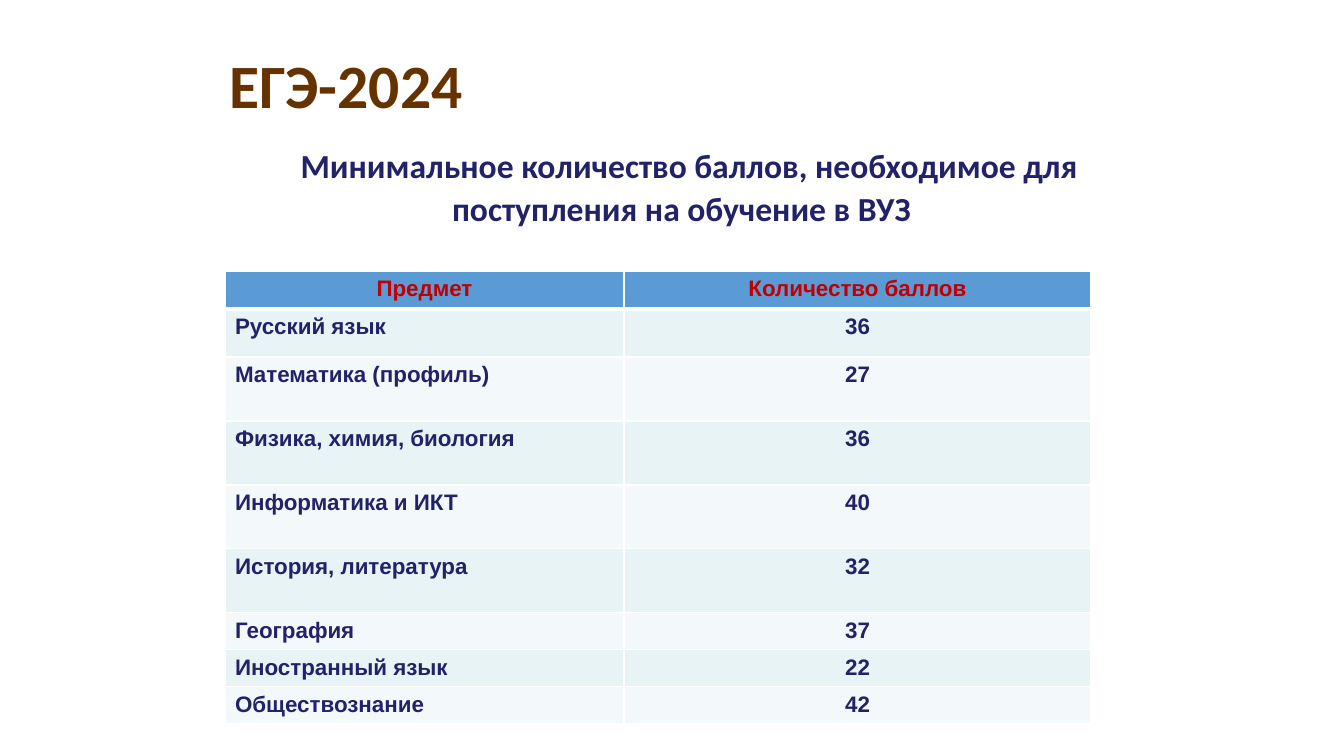
from dataclasses import dataclass

from lxml import etree
from pptx import Presentation
from pptx.dml.color import RGBColor
from pptx.enum.text import MSO_ANCHOR, MSO_AUTO_SIZE, PP_ALIGN
from pptx.oxml.ns import qn
from pptx.util import Pt

LEFT, CENTER = PP_ALIGN.LEFT, PP_ALIGN.CENTER
MIDDLE, TOP = MSO_ANCHOR.MIDDLE, MSO_ANCHOR.TOP
NO_FIT = MSO_AUTO_SIZE.NONE
TITLE_ONLY = 5
SCALE = 914400 / 100.8


@dataclass(frozen=True)
class Theme:
    head_font: str = "Calibri"
    cell_font: str = "Arial"
    brown: str = "663300"
    navy: str = "222268"
    red: str = "C00000"
    blue: str = "5B9BD5"
    bands: tuple = ("E7F3F4", "F3F9FA")
    rule: str = "FFFFFF"
    title: int = 44
    lead: int = 48
    sub: int = 24
    cell: int = 16


THEME = Theme()

HEADS = ("Предмет", "Количество баллов")
SCORES = (
    ("Русский язык", 36),
    ("Математика (профиль)", 27),
    ("Физика, химия, биология", 36),
    ("Информатика и ИКТ", 40),
    ("История, литература", 32),
    ("География", 37),
    ("Иностранный язык", 22),
    ("Обществознание", 42),
)
COLS = (399, 467)
ROWS = (38, 48) + (64,) * 4 + (37,) * 3


def px(n):
    return round(n * SCALE)


def place(shape, x, y, w, h):
    shape.left, shape.top, shape.width, shape.height = map(px, (x, y, w, h))


def add_run(para, text, font, size, color):
    run = para.add_run()
    run.text = text
    run.font.name = font
    run.font.size = Pt(size)
    run.font.bold = True
    run.font.color.rgb = RGBColor.from_string(color)


def set_frame(frame, anchor, align):
    """Prepare a heading's text frame and return its first paragraph."""
    frame.word_wrap = True
    frame.auto_size = NO_FIT
    frame.vertical_anchor = anchor
    para = frame.paragraphs[0]
    para.alignment = align
    para.line_spacing = 0.9
    return para


def add_title(slide):
    title = slide.shapes.title
    place(title, 219, 21, 907, 135)
    para = set_frame(title.text_frame, MIDDLE, LEFT)
    add_run(para, "ЕГЭ-2024", THEME.head_font, THEME.title, THEME.brown)


def add_lead(slide):
    box = slide.shapes.add_textbox(0, 0, 0, 0)
    place(box, 228, 115, 907, 139)
    para = set_frame(box.text_frame, TOP, CENTER)
    para.space_before = Pt(10)
    text = "Минимальное количество баллов, необходимое для поступления на обучение в ВУЗ"
    for part, size in ((" ", THEME.lead), (text, THEME.sub)):
        add_run(para, part, THEME.head_font, size, THEME.navy)


def set_edges(cell, top, bottom):
    """Draw the cell's borders; top and bottom are widths in points."""
    props = cell._tc.get_or_add_tcPr()
    for tag, width in (("lnL", 1), ("lnR", 1), ("lnT", top), ("lnB", bottom)):
        line = etree.SubElement(props, qn(f"a:{tag}"), w=str(Pt(width)))
        fill = etree.SubElement(line, qn("a:solidFill"))
        etree.SubElement(fill, qn("a:srgbClr"), val=THEME.rule)


def fill_cell(cell, text, row, col):
    head = row == 0
    set_edges(cell, 3 if row == 1 else 1, 3 if head else 1)
    cell.fill.solid()
    back = THEME.blue if head else THEME.bands[(row - 1) % 2]
    cell.fill.fore_color.rgb = RGBColor.from_string(back)
    para = cell.text_frame.paragraphs[0]
    para.alignment = CENTER if head or col else LEFT
    color = THEME.red if head else THEME.navy
    add_run(para, str(text), THEME.cell_font, THEME.cell, color)


def add_scores(slide):
    size = px(sum(COLS)), px(sum(ROWS))
    frame = slide.shapes.add_table(len(ROWS), len(COLS), px(225), px(271), *size)
    table = frame.table
    for col, width in zip(table.columns, COLS):
        col.width = px(width)
    for row, height in zip(table.rows, ROWS):
        row.height = px(height)
    for r, texts in enumerate((HEADS, *SCORES)):
        for c, text in enumerate(texts):
            fill_cell(table.cell(r, c), text, r, c)


def main():
    deck = Presentation()
    deck.slide_width, deck.slide_height = px(1344), px(756)
    slide = deck.slides.add_slide(deck.slide_layouts[TITLE_ONLY])
    add_title(slide)
    add_lead(slide)
    add_scores(slide)
    deck.save("out.pptx")


if __name__ == "__main__":
    main()
